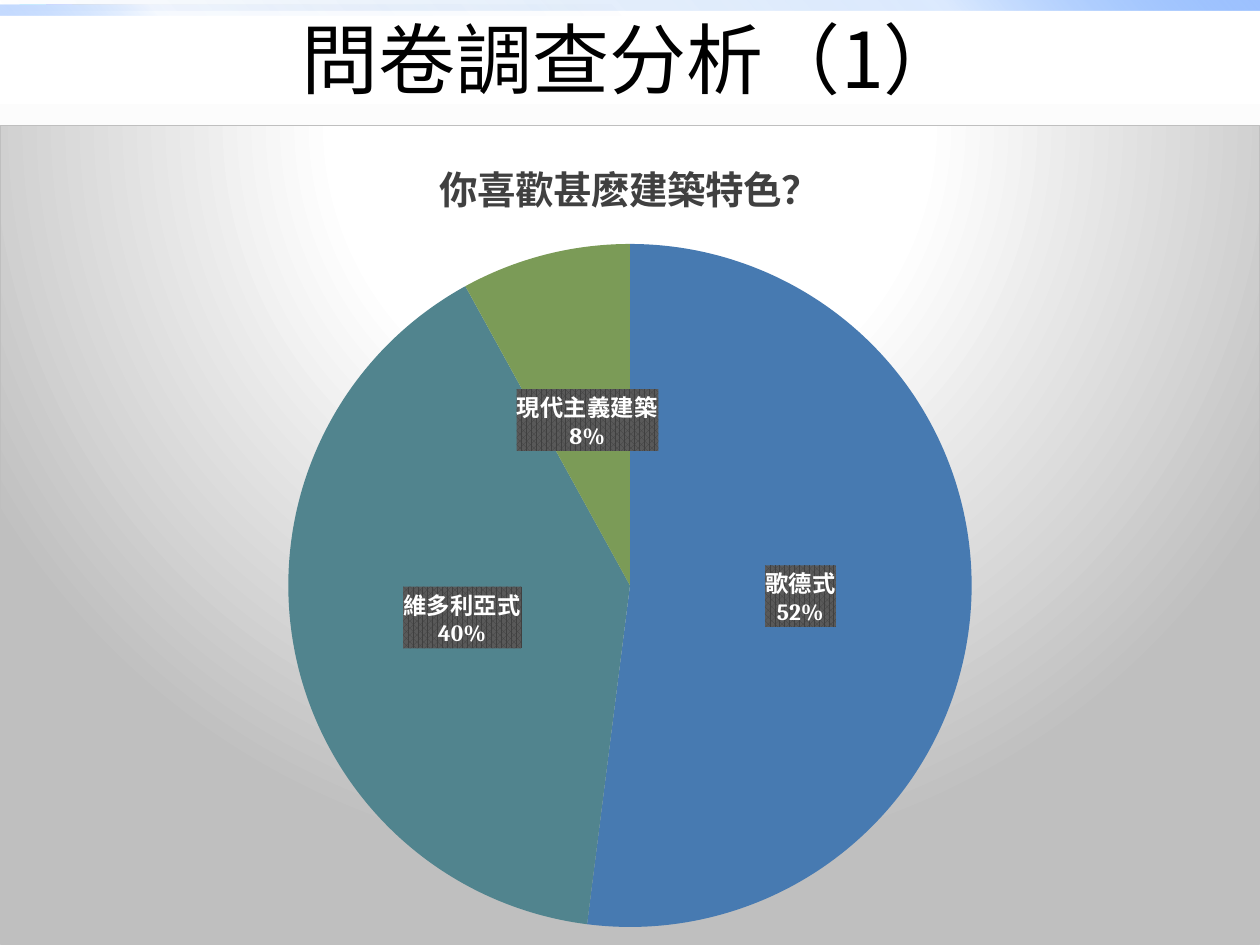
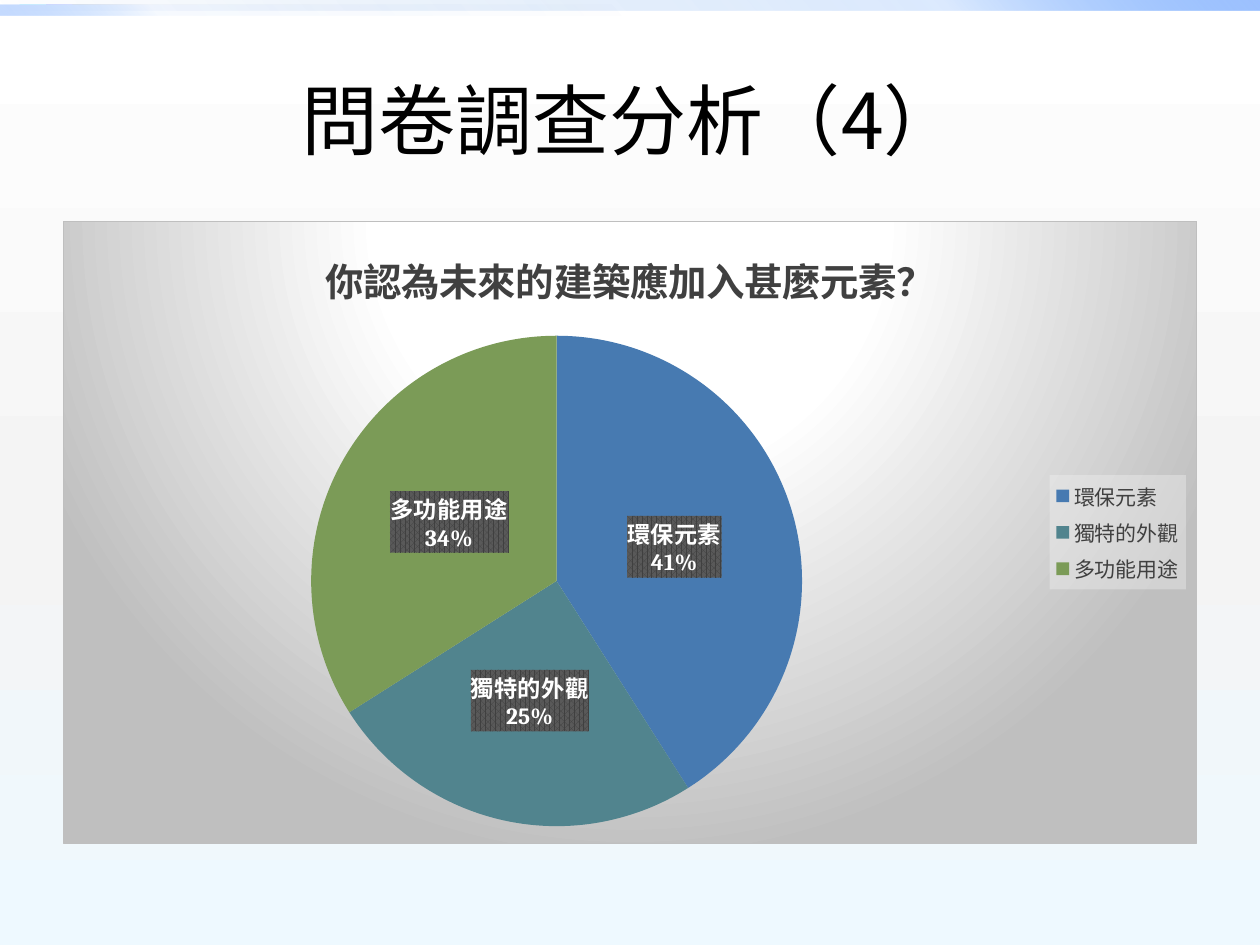
from dataclasses import dataclass

from lxml import etree
from pptx import Presentation
from pptx.chart.data import CategoryChartData
from pptx.dml.color import RGBColor
from pptx.enum.chart import XL_CHART_TYPE, XL_LABEL_POSITION, XL_LEGEND_POSITION
from pptx.enum.shapes import MSO_SHAPE
from pptx.enum.text import MSO_ANCHOR, PP_ALIGN
from pptx.oxml import parse_xml
from pptx.oxml.ns import nsdecls, qn
from pptx.util import Inches, Pt

PIE = XL_CHART_TYPE.PIE
LABEL_CENTER = XL_LABEL_POSITION.CENTER
LEGEND_RIGHT = XL_LEGEND_POSITION.RIGHT
RECTANGLE = MSO_SHAPE.RECTANGLE
MIDDLE = MSO_ANCHOR.MIDDLE
CENTER = PP_ALIGN.CENTER
BLANK_LAYOUT = 6


@dataclass(frozen=True)
class Theme:
    title_font: str = "Noto Sans CJK SC"
    chart_font: str = "Cambria"
    title_size: float = 44
    question_size: float = 22
    label_size: float = 13.3
    legend_size: float = 12
    chart_size: float = 10
    black: str = "000000"
    white: str = "FFFFFF"
    dark: str = "404040"
    label_stripe: str = "595959"
    border: str = "BFBFBF"
    legend_fill: str = "F2F2F2"
    slices: tuple = ("477AB1", "51848E", "7B9B57")
    # Gradient stops: position %, colour, opacity %
    page: tuple = ((0, "FFFFFF", 100), (55, "F4F4F4", 100), (100, "EEF9FF", 100))
    top_band: tuple = ((0, "0058B7", 0), (75, "4F95FF", 20), (100, "9EC2FF", 100))
    left_band: tuple = ((0, "0058B7", 0), (75, "4F95FF", 5), (100, "9EC2FF", 60))
    chart_area: tuple = ((0, "FFFFFF", 100), (39, "FFFFFF", 100), (100, "BFBFBF", 100))


SPOTLIGHT = ('<a:path path="circle"><a:fillToRect l="50000" t="-80000" '
             'r="50000" b="180000"/></a:path>')


def linear(angle):
    return f'<a:lin ang="{angle * 60000}" scaled="0"/>'


def gradient(stops, direction):
    marks = "".join(
        f'<a:gs pos="{position * 1000}"><a:srgbClr val="{color}">'
        f'<a:alpha val="{opacity * 1000}"/></a:srgbClr></a:gs>'
        for position, color, opacity in stops)
    return (f'<a:gradFill {nsdecls("a")} rotWithShape="1">'
            f'<a:gsLst>{marks}</a:gsLst>{direction}</a:gradFill>')


def replace_solid(properties, fill_xml):
    solid = properties.find(qn("a:solidFill"))
    properties.replace(solid, parse_xml(fill_xml))


def chart_properties(content):
    return parse_xml(f'<c:spPr {nsdecls("c", "a")}>{content}</c:spPr>')


def style(font, name, size, color, bold=False):
    font.name = name
    font.size = Pt(size)
    font.bold = bold
    font.color.rgb = RGBColor.from_string(color)


class Deck:
    def __init__(self, theme):
        self.theme = theme
        self.presentation = Presentation()
        self.presentation.slide_width = Inches(10)
        self.presentation.slide_height = Inches(7.5)
        self.slide = None

    def new_slide(self):
        layout = self.presentation.slide_layouts[BLANK_LAYOUT]
        self.slide = self.presentation.slides.add_slide(layout)
        self.slide.background.fill.solid()
        page = self.slide.element.find(".//" + qn("p:bgPr"))
        replace_solid(page, gradient(self.theme.page, linear(90)))
        self.band(0, 10, self.theme.top_band, 315)
        self.band(0.04, 5, self.theme.left_band, 135)

    def band(self, top, width, stops, angle):
        band = self.slide.shapes.add_shape(
            RECTANGLE, 0, Inches(top), Inches(width), Inches(0.08))
        band.shadow.inherit = False
        band.line.fill.background()
        band.fill.solid()
        replace_solid(band.element.spPr, gradient(stops, linear(angle)))

    def title(self, text, top, height):
        box = self.slide.shapes.add_textbox(
            Inches(0.51), Inches(top), Inches(9), Inches(height))
        frame = box.text_frame
        frame.word_wrap = True
        frame.vertical_anchor = MIDDLE
        heading = frame.paragraphs[0]
        heading.alignment = CENTER
        run = heading.add_run()
        run.text = text
        style(run.font, self.theme.title_font, self.theme.title_size, self.theme.black)
        east_asian = etree.SubElement(run.font._element, qn("a:ea"))
        east_asian.set("typeface", self.theme.title_font)

    def pie(self, question, shares, left, top, width, height, legend=False):
        theme = self.theme
        data = CategoryChartData()
        data.categories = list(shares)
        data.add_series(question, list(shares.values()))
        chart = self.slide.shapes.add_chart(
            PIE, Inches(left), Inches(top), Inches(width), Inches(height), data).chart
        style(chart.font, theme.chart_font, theme.chart_size, theme.black)
        self.chart_area(chart)
        self.question(chart, question)

        plot = chart.plots[0]
        plot.vary_by_categories = True
        answers = plot.series[0]
        for index, color in enumerate(theme.slices):
            piece = answers.points[index].format
            piece.fill.solid()
            piece.fill.fore_color.rgb = RGBColor.from_string(color)
            piece.line.fill.background()
        self.slice_labels(answers.data_labels)

        chart.has_legend = legend
        if legend:
            self.legend(chart.legend)

    def chart_area(self, chart):
        border = (f'<a:ln w="{Pt(0.75)}"><a:solidFill>'
                  f'<a:srgbClr val="{self.theme.border}"/></a:solidFill></a:ln>')
        area = chart_properties(gradient(self.theme.chart_area, SPOTLIGHT) + border)
        chart.element.find(qn("c:chart")).addnext(area)

    def question(self, chart, text):
        chart.has_title = True
        chart.chart_title.include_in_layout = False
        run = chart.chart_title.text_frame.paragraphs[0].add_run()
        run.text = text
        style(run.font, self.theme.chart_font, self.theme.question_size,
              self.theme.dark, bold=True)

    def slice_labels(self, labels):
        """Show category over percentage on a dark striped ground."""
        theme = self.theme
        style(labels.font, theme.chart_font, theme.label_size, theme.white, bold=True)
        labels.show_value = False
        labels.show_category_name = True
        labels.show_percentage = True
        labels.position = LABEL_CENTER
        ground = chart_properties(
            f'<a:pattFill prst="pct75"><a:fgClr><a:srgbClr val="{theme.dark}"/></a:fgClr>'
            f'<a:bgClr><a:srgbClr val="{theme.label_stripe}"/></a:bgClr></a:pattFill>')
        element = labels._element
        element.find(qn("c:txPr")).addprevious(ground)
        separator = parse_xml(f'<c:separator {nsdecls("c")}>\n</c:separator>')
        leader = element.find(qn("c:showLeaderLines"))
        if leader is None:
            element.append(separator)
        else:
            leader.addprevious(separator)

    def legend(self, legend):
        theme = self.theme
        legend.position = LEGEND_RIGHT
        legend.include_in_layout = False
        style(legend.font, theme.chart_font, theme.legend_size, theme.dark)
        ground = chart_properties(
            f'<a:solidFill><a:srgbClr val="{theme.legend_fill}">'
            '<a:alpha val="39000"/></a:srgbClr></a:solidFill>')
        legend._element.find(qn("c:txPr")).addprevious(ground)


def main():
    deck = Deck(Theme())

    deck.new_slide()
    deck.title("問卷調查分析（1）", 0, 0.92)
    deck.pie("你喜歡甚麽建築特色？",
             {"歌德式": 52, "維多利亞式": 40, "現代主義建築": 8},
             0, 0.99, 10, 6.51)

    deck.new_slide()
    deck.title("問卷調查分析（4）", 0.52, 0.84)
    deck.pie("你認為未來的建築應加入甚麼元素？",
             {"環保元素": 41, "獨特的外觀": 25, "多功能用途": 34},
             0.5, 1.75, 9, 4.95, legend=True)

    deck.presentation.save("out.pptx")


if __name__ == "__main__":
    main()
